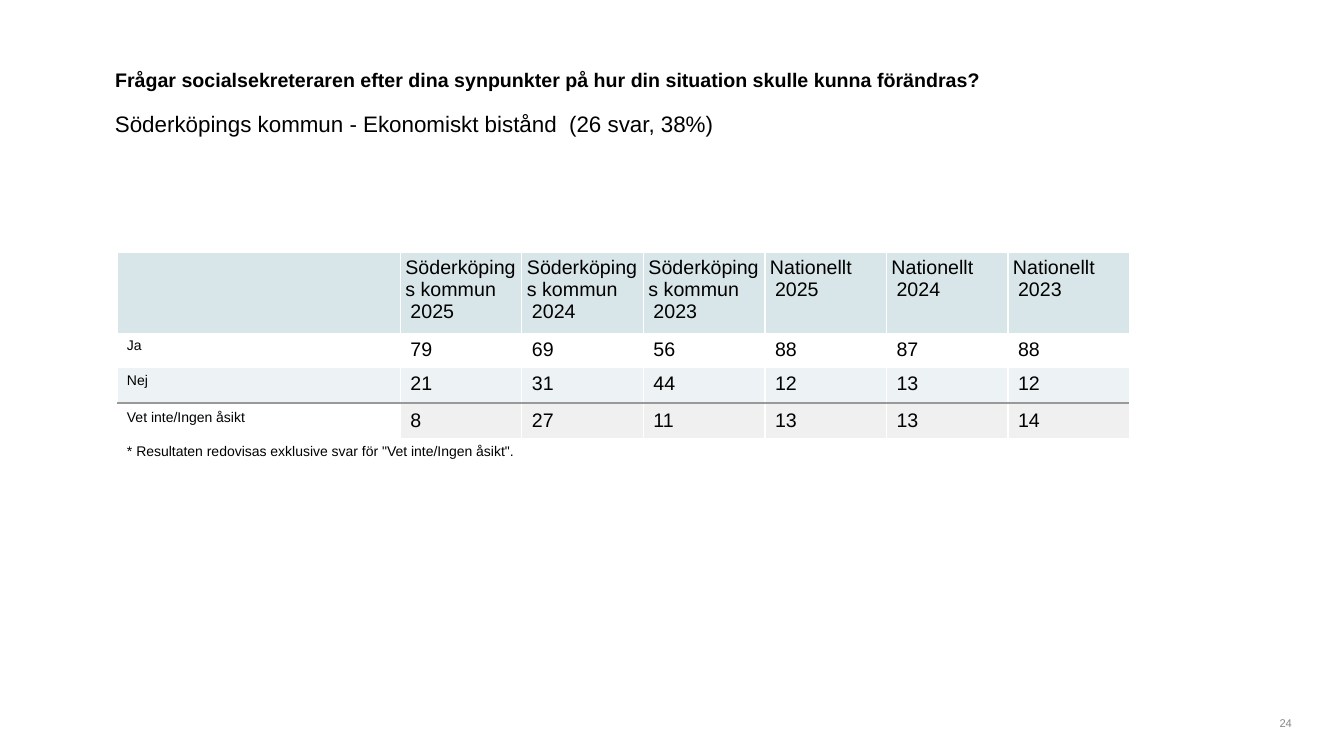
"""Builds a survey slide with a table of answers by area and year."""
from lxml.etree import SubElement
from pptx import Presentation
from pptx.dml.color import RGBColor
from pptx.enum.text import MSO_ANCHOR, MSO_AUTO_SIZE, PP_ALIGN
from pptx.oxml.ns import qn
from pptx.util import Pt

COLORS = {
    "text": "000000",
    "page_number": "898989",
    "header": "D9E6E9",
    "band": "EDF3F4",
    "rule": "999999",
    "unsure": "F0F0F0",
    "border": "FFFFFF",
}
FONT = "Arial"
AREAS = ["Söderköpings kommun", "Nationellt"]
YEARS = ["2025", "2024", "2023"]
ANSWERS = {
    1: ("Ja", [79, 69, 56, 88, 87, 88], None, None),
    2: ("Nej", [21, 31, 44, 12, 13, 12], "band", "band"),
    4: ("Vet inte/Ingen åsikt", [8, 27, 11, 13, 13, 14], None, "unsure"),
}
RULE_ROW, NOTE_ROW = 3, 5
NOTE = '* Resultaten redovisas exklusive svar för "Vet inte/Ingen åsikt".'
ROW_HEIGHTS = [58, 24.7, 24.7, 1.5, 24.7, 20]
COLUMN_WIDTHS = [202.5] + [86.8] * 6


def color(name):
    return RGBColor.from_string(COLORS[name])


def add_span(para, text, size, color_name="text", bold=False):
    span = para.add_run()
    span.text = text
    span.font.name = FONT
    span.font.size = Pt(size)
    span.font.bold = bold
    span.font.color.rgb = color(color_name)


def format_box(box, left, top, width, height, anchor=MSO_ANCHOR.TOP):
    box.left, box.top, box.width, box.height = Pt(left), Pt(top), Pt(width), Pt(height)
    frame = box.text_frame
    frame.word_wrap = True
    frame.auto_size = MSO_AUTO_SIZE.NONE
    frame.vertical_anchor = anchor
    para = frame.paragraphs[0]
    para.alignment = PP_ALIGN.LEFT
    return para


def add_box(page, *place, **options):
    box = page.shapes.add_textbox(0, 0, 0, 0)
    return format_box(box, *place, **options)


def set_borders(cell, hidden):
    properties = cell._tc.get_or_add_tcPr()
    for position, side in enumerate("LRTB"):
        line = properties.makeelement(qn(f"a:ln{side}"), {"w": str(Pt(1))})
        if side in hidden:
            SubElement(line, qn("a:noFill"))
        else:
            fill = SubElement(line, qn("a:solidFill"))
            SubElement(fill, qn("a:srgbClr"), val=COLORS["border"])
        properties.insert(position, line)


def format_cell(cell, fill, hidden="", margin=3.6):
    cell.margin_left = cell.margin_right = Pt(margin)
    cell.margin_top = cell.margin_bottom = Pt(margin)
    if fill:
        cell.fill.solid()
        cell.fill.fore_color.rgb = color(fill)
    else:
        cell.fill.background()
    set_borders(cell, hidden)


def write_cell(cell, text, size, indent=3.6):
    para = cell.text_frame.paragraphs[0]
    para._p.get_or_add_pPr().set("marL", str(Pt(indent)))
    add_span(para, text, size)


def fill_header(table):
    format_cell(table.cell(0, 0), "header")
    titles = [(area, year) for area in AREAS for year in YEARS]
    for column, (area, year) in enumerate(titles, 1):
        cell = table.cell(0, column)
        format_cell(cell, "header")
        write_cell(cell, area, 14, indent=0)
        para = cell.text_frame.add_paragraph()
        para._p.get_or_add_pPr().set("marL", str(Pt(3.6)))
        add_span(para, year, 14)


def fill_answers(table):
    for row, (label, values, label_fill, value_fill) in ANSWERS.items():
        hidden = {RULE_ROW - 1: "B", RULE_ROW + 1: "T"}.get(row, "")
        for column, text in enumerate([label, *values]):
            cell = table.cell(row, column)
            format_cell(cell, value_fill if column else label_fill, hidden)
            write_cell(cell, str(text), 14 if column else 10)


def merge_row(table, row):
    cell = table.cell(row, 0)
    cell.merge(table.cell(row, len(COLUMN_WIDTHS) - 1))
    return cell


def fill_rule(table):
    merge_row(table, RULE_ROW)
    for cell in table.rows[RULE_ROW].cells:
        format_cell(cell, "rule", "LRTB", margin=0)
        para = cell.text_frame.paragraphs[0]
        SubElement(para._p, qn("a:endParaRPr"), sz="100")


def fill_note(table):
    cell = merge_row(table, NOTE_ROW)
    format_cell(cell, None)
    write_cell(cell, NOTE, 10)


def add_answer_table(page):
    frame = page.shapes.add_table(
        len(ROW_HEIGHTS), len(COLUMN_WIDTHS), Pt(83.5), Pt(180),
        Pt(sum(COLUMN_WIDTHS)), Pt(sum(ROW_HEIGHTS)))
    table = frame.table
    table.first_row = False
    table.horz_banding = False
    for row, height in zip(table.rows, ROW_HEIGHTS):
        row.height = Pt(height)
    for column, width in zip(table.columns, COLUMN_WIDTHS):
        column.width = Pt(width)
    fill_header(table)
    fill_answers(table)
    fill_rule(table)
    fill_note(table)


def main():
    deck = Presentation()
    deck.slide_width, deck.slide_height = Pt(960), Pt(540)
    page = deck.slides.add_slide(deck.slide_layouts[5])
    title = format_box(page.shapes.title, 75, 45, 810, 30)
    add_span(title, "Frågar socialsekreteraren efter dina synpunkter på hur "
             "din situation skulle kunna förändras?", 14, bold=True)
    subtitle = add_box(page, 75, 75, 810, 30)
    add_span(subtitle, "Söderköpings kommun - Ekonomiskt bistånd  (26 svar, 38%)", 16)
    add_answer_table(page)
    number = add_box(page, 900, 510, 30, 15, anchor=MSO_ANCHOR.BOTTOM)
    number.alignment = PP_ALIGN.RIGHT
    add_span(number, "24", 8, "page_number")
    deck.save("out.pptx")


if __name__ == "__main__":
    main()
